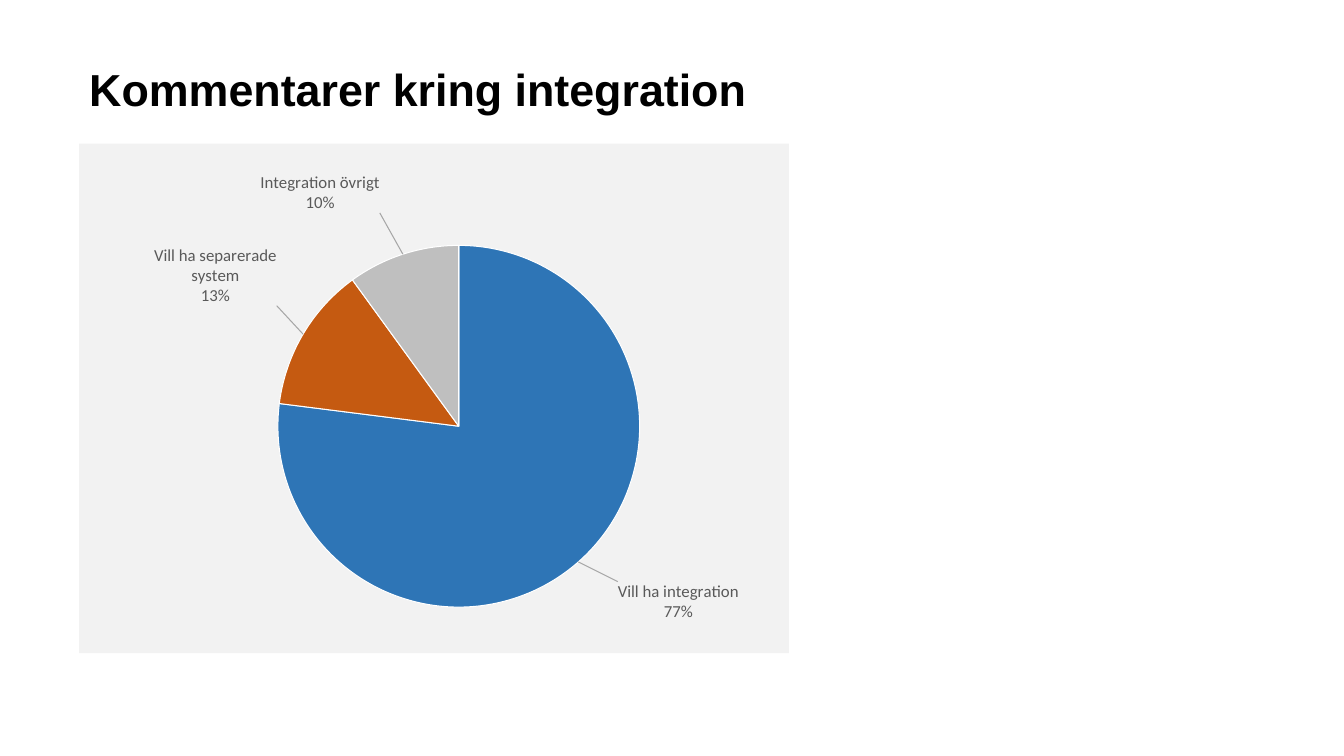
from lxml.etree import SubElement
from pptx import Presentation
from pptx.chart.data import CategoryChartData
from pptx.dml.color import RGBColor
from pptx.enum.chart import XL_CHART_TYPE, XL_LABEL_POSITION
from pptx.enum.text import MSO_ANCHOR, PP_ALIGN
from pptx.oxml import parse_xml
from pptx.oxml.ns import nsdecls, qn
from pptx.util import Pt

COLORS = {"title": "000000", "panel": "F2F2F2", "label": "595959",
          "border": "FFFFFF", "leader": "A6A6A6"}

# Category, share, slice colour, label shift as fractions of the chart
SLICES = [
    ("Vill ha integration", 77, "2E75B6", (0.05, 0.03)),
    ("Vill ha separerade system", 13, "C55A11", (-0.03, -0.05)),
    ("Integration övrigt", 10, "BFBFBF", (-0.03, -0.07)),
]


def manual_layout(mode, **values):
    """Return a manual chart layout with the given fractions."""
    items = "".join(f'<c:{key} val="{value}"/>' for key, value in values.items())
    return f'<c:layout {nsdecls("c")}><c:manualLayout>{mode}{items}</c:manualLayout></c:layout>'


presentation = Presentation()
presentation.slide_width = Pt(960)
presentation.slide_height = Pt(540)
slide = presentation.slides.add_slide(presentation.slide_layouts[5])

# Title
title = slide.shapes.title
title.left, title.top, title.width, title.height = Pt(56.5), Pt(45), Pt(799), Pt(57.5)
title.text_frame.word_wrap = True
title.text_frame.vertical_anchor = MSO_ANCHOR.TOP
paragraph = title.text_frame.paragraphs[0]
paragraph.alignment = PP_ALIGN.LEFT
paragraph.line_spacing = 0.9
run = paragraph.add_run()
run.text = "Kommentarer kring integration"
run.font.name = "Arial"
run.font.size = Pt(32)
run.font.bold = True
run.font.color.rgb = RGBColor.from_string(COLORS["title"])

# Pie chart
chart_data = CategoryChartData()
chart_data.categories = [name for name, *_ in SLICES]
chart_data.add_series("Series 1", [share for _, share, *_ in SLICES])
chart = slide.shapes.add_chart(XL_CHART_TYPE.PIE, Pt(56.5), Pt(102.5),
                               Pt(507), Pt(364), chart_data).chart
chart.has_title = False
chart.has_legend = False
chart.font.name = "Calibri"
chart.font.size = Pt(12)
chart.font.color.rgb = RGBColor.from_string(COLORS["label"])
plot = chart.plots[0]
plot.vary_by_categories = True
series = plot.series[0]

# Slices
for index, (_, _, color, _) in enumerate(SLICES):
    point_format = series.points[index].format
    point_format.fill.solid()
    point_format.fill.fore_color.rgb = RGBColor.from_string(color)
    point_format.line.color.rgb = RGBColor.from_string(COLORS["border"])
    point_format.line.width = Pt(0.75)

# Labels: category above percentage
labels = series.data_labels
labels.show_value = False
labels.show_category_name = True
labels.show_percentage = True
labels.number_format = "0%"
labels.number_format_is_linked = False
labels.position = XL_LABEL_POSITION.OUTSIDE_END
labels.font.name = "Calibri"
labels.font.size = Pt(12)
labels.font.color.rgb = RGBColor.from_string(COLORS["label"])

# Label shifts, line separator and leader lines
label_element = series._element.find(qn("c:dLbls"))
for index, (_, _, _, (shift_x, shift_y)) in enumerate(SLICES):
    label_element.insert(index, parse_xml(
        f'<c:dLbl {nsdecls("c")}><c:idx val="{index}"/>'
        f'{manual_layout("", x=shift_x, y=shift_y)}'
        '<c:dLblPos val="outEnd"/><c:showLegendKey val="0"/><c:showVal val="0"/>'
        '<c:showCatName val="1"/><c:showSerName val="0"/><c:showPercent val="1"/>'
        '<c:showBubbleSize val="0"/><c:separator>\n</c:separator></c:dLbl>'))
for old in label_element.findall(qn("c:showLeaderLines")):
    label_element.remove(old)
SubElement(label_element, qn("c:separator")).text = "\n"
SubElement(label_element, qn("c:showLeaderLines")).set("val", "1")
label_element.append(parse_xml(
    f'<c:leaderLines {nsdecls("c", "a")}><c:spPr><a:ln w="9525"><a:solidFill>'
    f'<a:srgbClr val="{COLORS["leader"]}"/></a:solidFill></a:ln></c:spPr></c:leaderLines>'))

# Plot position and panel fill
plot_area = chart._chartSpace.chart.plotArea
for old in plot_area.findall(qn("c:layout")):
    plot_area.remove(old)
inner = '<c:layoutTarget val="inner"/><c:xMode val="edge"/><c:yMode val="edge"/>'
plot_area.insert(0, parse_xml(manual_layout(inner, x=0.28, y=0.2, w=0.51, h=0.71)))
chart._chartSpace.chart.addnext(parse_xml(
    f'<c:spPr {nsdecls("c", "a")}><a:solidFill><a:srgbClr val="{COLORS["panel"]}"/>'
    '</a:solidFill><a:ln><a:noFill/></a:ln></c:spPr>'))

presentation.save("out.pptx")
